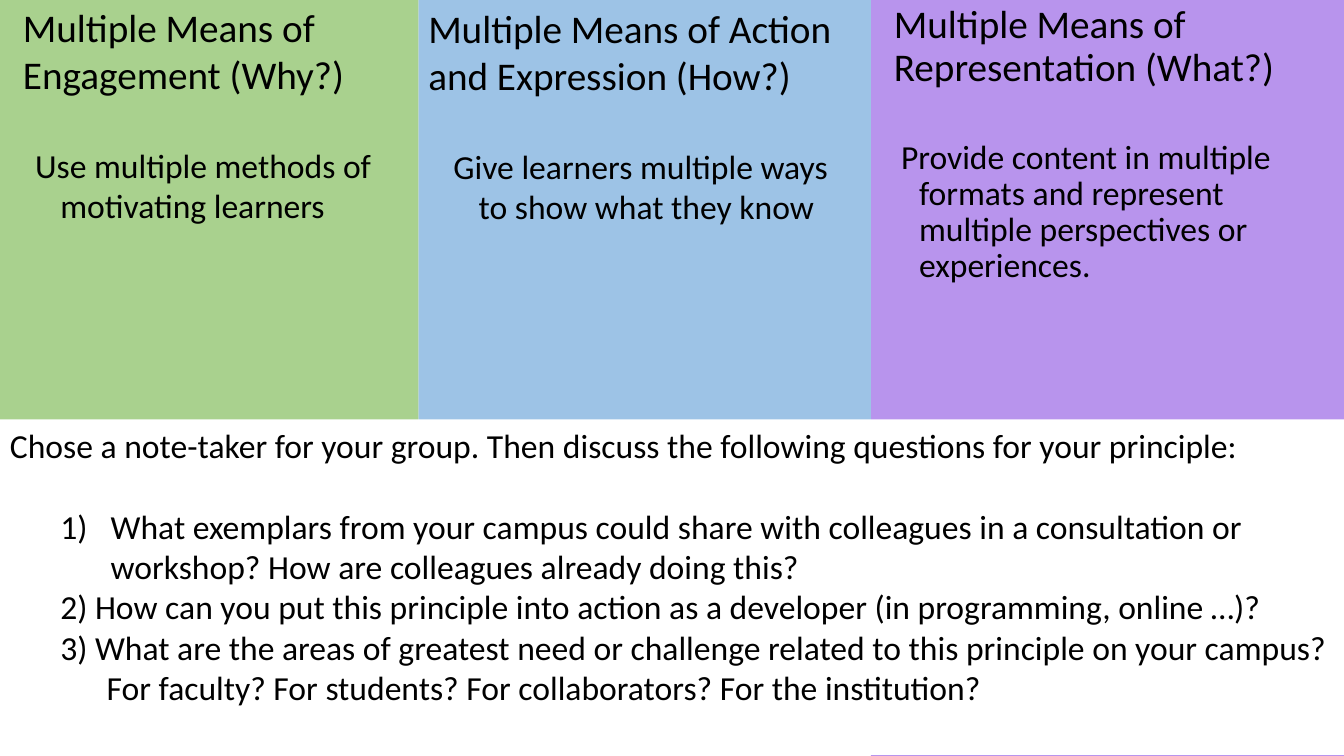
from dataclasses import dataclass

from lxml.etree import SubElement
from pptx import Presentation
from pptx.dml.color import RGBColor
from pptx.enum.shapes import MSO_SHAPE
from pptx.enum.text import MSO_ANCHOR, PP_ALIGN
from pptx.oxml.ns import qn
from pptx.util import Inches, Pt

COLORS = {"green": "A9D18E", "blue": "9DC3E6", "purple": "B894ED",
          "white": "FFFFFF", "black": "000000"}
WIDE, HIGH = Inches(13.33), Inches(7.5)
COL, ROW = WIDE / 100, HIGH / 100  # a grid of 100 columns and 100 rows


@dataclass
class Para:
    text: str
    size: int = 24
    left: float = 0
    hang: float = 0
    gap: float = 0
    lines: float = 1.0
    level: int = 0
    number: bool = False


@dataclass
class Panel:
    color: str
    col: float
    row: float
    cols: float
    rows: float
    inset: float
    paras: list[Para]


PANELS = [
    Panel("purple", 64.8, 0, 35.19, 100, 0.05, [
        Para("Multiple Means of Representation (What?)", 28, 0.13, lines=0.9),
        Para("Provide content in multiple formats and represent multiple "
             "perspectives or experiences.", 24, 0.38, 0.18, 36, 0.9, 1),
    ]),
    Panel("blue", 31.13, 0, 33.67, 93.6, 0.04, [
        Para("Multiple Means of Action and Expression (How?)", 28),
        Para("Give learners multiple ways to show what they know",
             24, 0.5, 0.25, 34, level=1),
    ]),
    Panel("green", 0, 0, 31.13, 90.13, 0.03, [
        Para("Multiple Means of Engagement (Why?)", 28, 0.13),
        Para("Use multiple methods of motivating learners",
             24, 0.5, 0.25, 34, level=1),
    ]),
    Panel("white", 0, 55.47, 100, 44.4, 0.06, [
        Para("Chose a note-taker for your group. Then discuss the following "
             "questions for your principle:"),
        Para("What exemplars from your campus could share with colleagues in "
             "a consultation or workshop? How are colleagues already doing "
             "this?", 24, 1, 0.5, 28.5, level=1, number=True),
        Para("2) How can you put this principle into action as a developer "
             "(in programming, online …)?", 24, 0.5, level=1),
        Para("3) What are the areas of greatest need or challenge related to "
             "this principle on your campus? For faculty? For students? For "
             "collaborators? For the institution?", 24, 0.96, 0.46, level=1),
    ]),
]


def put(item: object, form: dict) -> None:
    """Set each named attribute of the item."""
    for key, value in form.items():
        setattr(item, key, value)


def write(line, para: Para) -> None:
    put(line, {"alignment": PP_ALIGN.LEFT, "level": para.level,
               "line_spacing": para.lines, "space_before": Pt(para.gap)})
    props = line._p.get_or_add_pPr()
    props.set("marL", str(Inches(para.left)))
    props.set("indent", str(-Inches(para.hang)))
    if para.number:
        SubElement(props, qn("a:buAutoNum"), type="arabicParenR")
    run = line.add_run()
    run.text = para.text
    put(run.font, {"name": "Calibri", "size": Pt(para.size)})
    run.font.color.rgb = RGBColor.from_string(COLORS["black"])


def draw(slide, panel: Panel) -> None:
    box = slide.shapes.add_shape(
        MSO_SHAPE.RECTANGLE, int(panel.col * COL), int(panel.row * ROW),
        int(panel.cols * COL), int(panel.rows * ROW))
    box.shadow.inherit = False
    box.fill.solid()
    box.fill.fore_color.rgb = RGBColor.from_string(COLORS[panel.color])
    box.line.fill.background()
    frame = box.text_frame
    put(frame, {"word_wrap": True, "vertical_anchor": MSO_ANCHOR.TOP,
                "margin_top": Inches(panel.inset)})
    for i, para in enumerate(panel.paras):
        write(frame.add_paragraph() if i else frame.paragraphs[0], para)


def main() -> None:
    deck = Presentation()
    put(deck, {"slide_width": WIDE, "slide_height": HIGH})
    slide = deck.slides.add_slide(deck.slide_layouts[6])
    for panel in PANELS:
        draw(slide, panel)
    deck.save("out.pptx")


if __name__ == "__main__":
    main()
